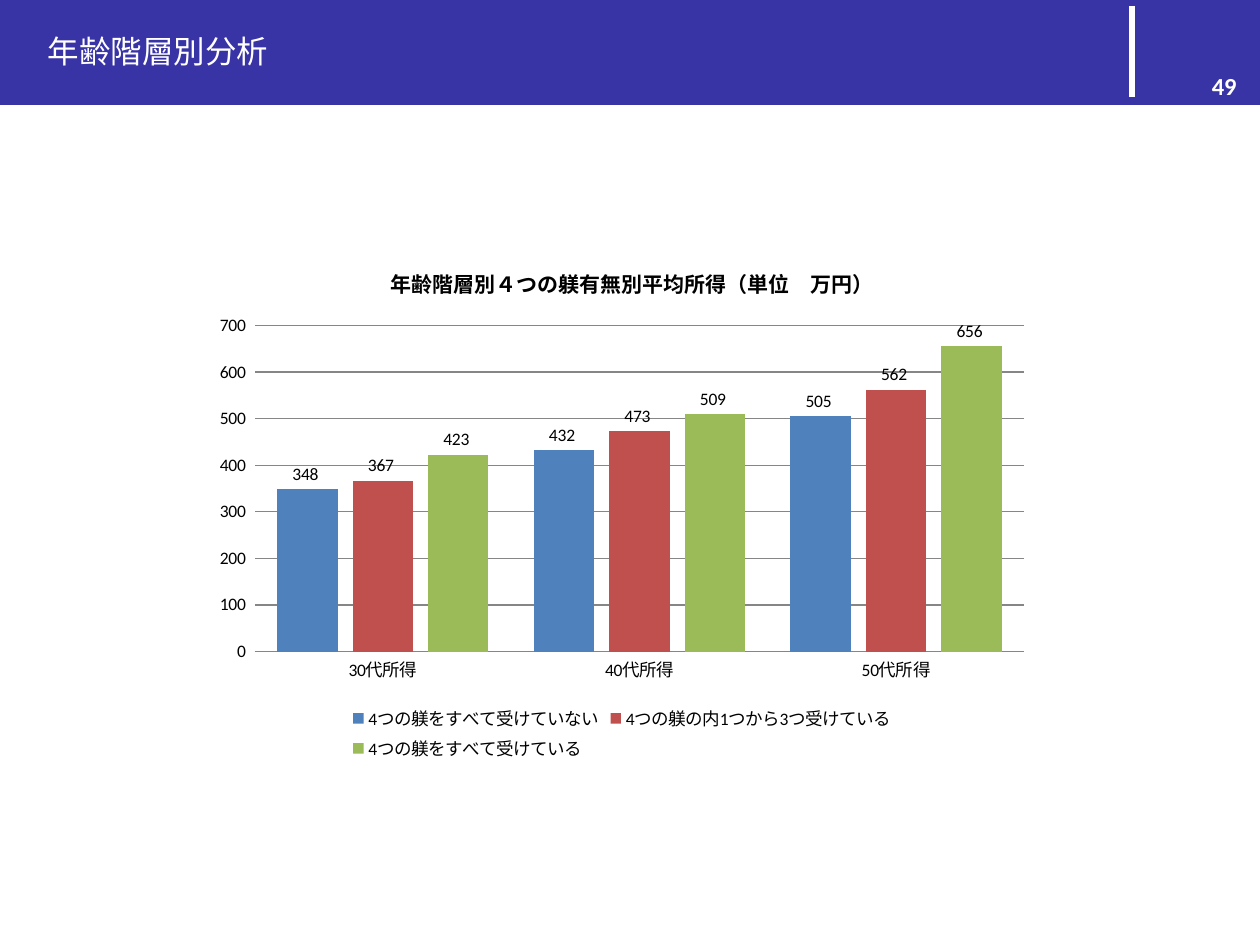
"""Build a slide with a header band and a clustered column chart of income by age group."""
from pptx import Presentation, util as u
from pptx.chart.data import CategoryChartData
from pptx.dml.color import RGBColor
from pptx.enum import chart as c, shapes, text
from pptx.oxml.ns import qn
from lxml import etree

INDIGO = RGBColor(0x39, 0x34, 0xA6)
WHITE = RGBColor(0xFF, 0xFF, 0xFF)
BLACK = RGBColor(0, 0, 0)
GREY = RGBColor(0x86, 0x86, 0x86)
BLUE = RGBColor(0x4F, 0x81, 0xBD)
RED = RGBColor(0xC0, 0x50, 0x4D)
GREEN = RGBColor(0x9B, 0xBB, 0x59)
FONT = "Calibri"
PX_PER_INCH = 126


def px(*lengths):
    return [u.Inches(length / PX_PER_INCH) for length in lengths]


def style(font, size, color, bold=False):
    font.name = FONT
    font.size = u.Pt(size)
    font.bold = bold
    font.color.rgb = color


presentation = Presentation()
presentation.slide_width, presentation.slide_height = px(1260, 945)
slide = presentation.slides.add_slide(presentation.slide_layouts[5])

for left, width in ((0, 988), (988, 272)):
    band = slide.shapes.add_shape(shapes.MSO_SHAPE.RECTANGLE, *px(left, 0, width, 105))
    band.shadow.inherit = False
    band.fill.solid()
    band.fill.fore_color.rgb = INDIGO
    band.line.fill.background()

divider = slide.shapes.add_connector(shapes.MSO_CONNECTOR.STRAIGHT, *px(1132, 6, 1132, 97))
divider.line.color.rgb = WHITE
divider.line.width = u.Pt(3.5)
etree.SubElement(divider._element.spPr, qn("a:effectLst"))

number = slide.shapes.add_textbox(*px(955, 53, 294, 66))
number.text_frame.word_wrap = True
number.text_frame.vertical_anchor = text.MSO_ANCHOR.MIDDLE
paragraph = number.text_frame.paragraphs[0]
paragraph.text = "49"
paragraph.alignment = text.PP_ALIGN.RIGHT
style(paragraph.font, 14, WHITE, True)

data = CategoryChartData(number_format="0_ ")
data.categories = ["30代所得", "40代所得", "50代所得"]
data.add_series("4つの躾をすべて受けていない", (348, 432, 505))
data.add_series("4つの躾の内1つから3つ受けている", (367, 473, 562))
data.add_series("4つの躾をすべて受けている", (423, 509, 656))
chart = slide.shapes.add_chart(
    c.XL_CHART_TYPE.COLUMN_CLUSTERED, *px(203, 244, 838, 522), data
).chart
style(chart.font, 10, BLACK)

chart.has_title = True
paragraph = chart.chart_title.text_frame.paragraphs[0]
paragraph.text = "　年齢階層別４つの躾有無別平均所得（単位　万円）"
style(paragraph.font, 12, BLACK, True)
chart.chart_title.include_in_layout = False

chart.has_legend = True
chart.legend.position = c.XL_LEGEND_POSITION.BOTTOM
chart.legend.include_in_layout = False

category_axis = chart.category_axis
category_axis.major_tick_mark = c.XL_TICK_MARK.NONE
category_axis.format.line.color.rgb = GREY
value_axis = chart.value_axis
value_axis.minimum_scale, value_axis.maximum_scale, value_axis.major_unit = 0, 700, 100
value_axis.major_tick_mark = c.XL_TICK_MARK.NONE
value_axis.format.line.fill.background()
value_axis.major_gridlines.format.line.color.rgb = GREY
value_axis.tick_labels.number_format = "0_ "
value_axis.tick_labels.number_format_is_linked = False

plot = chart.plots[0]
plot.vary_by_categories = False
plot.gap_width = 75
plot.overlap = -25
for series, color in zip(plot.series, (BLUE, RED, GREEN)):
    series.format.fill.solid()
    series.format.fill.fore_color.rgb = color
    labels = series.data_labels
    labels.show_value = True
    labels.number_format = "0_ "
    labels.number_format_is_linked = False
    labels.position = c.XL_LABEL_POSITION.OUTSIDE_END

title = slide.shapes.title
title.left, title.top, title.width, title.height = px(35, 26, 248, 50)
title.text_frame.word_wrap = False
title.text_frame.vertical_anchor = text.MSO_ANCHOR.MIDDLE
paragraph = title.text_frame.paragraphs[0]
paragraph.text = "年齢階層別分析"
paragraph.alignment = text.PP_ALIGN.LEFT
style(paragraph.font, 18, WHITE)
title._element.getparent().append(title._element)

presentation.save("out.pptx")
